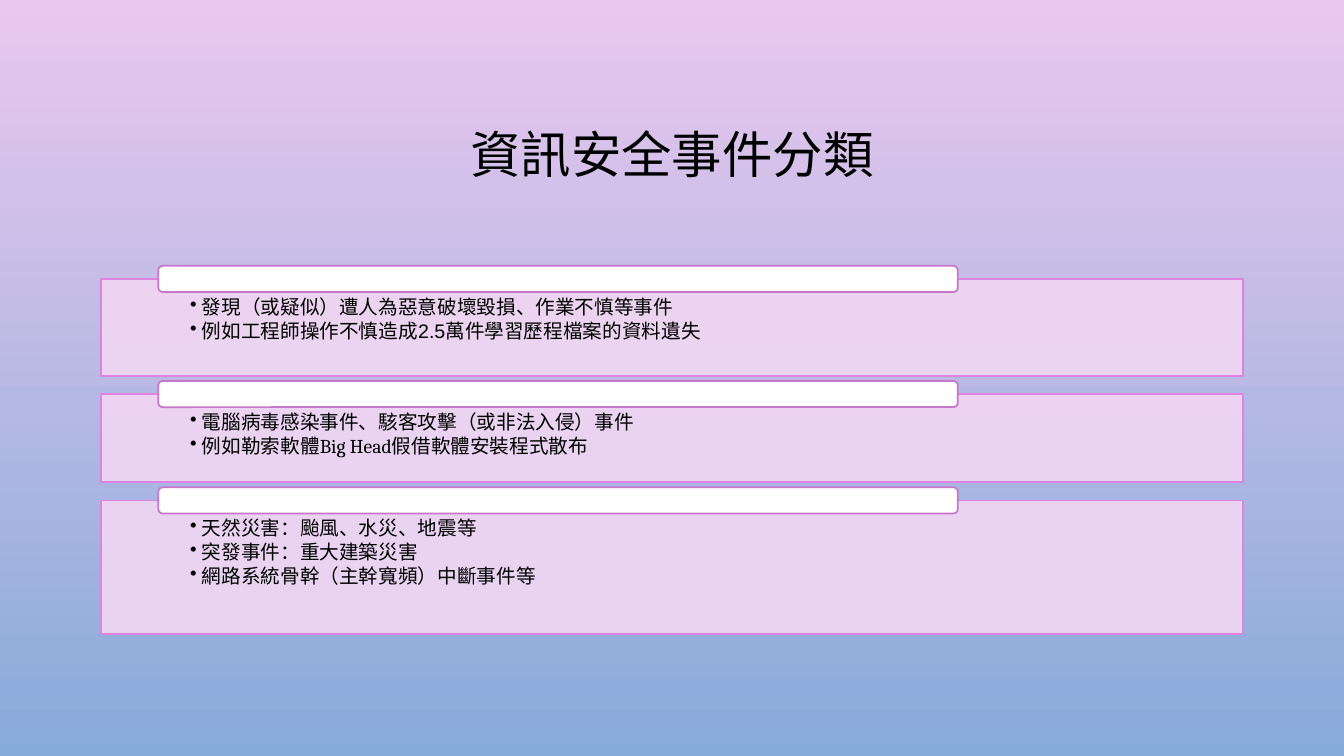
from lxml.etree import SubElement
from pptx import Presentation
from pptx.dml.color import RGBColor
from pptx.enum.shapes import MSO_SHAPE
from pptx.enum.text import MSO_ANCHOR, PP_ALIGN
from pptx.oxml.ns import qn
from pptx.util import Cm, Pt

LEFT, WIDTH = 2.54, 28.79
FIRST_TOP, GAP = 7.03, 0.46
TAB_LEFT, TAB_WIDTH, TAB_HEIGHT, TAB_RISE = 3.99, 20.15, 0.66, 0.33

CATEGORIES = [
    (2.44, [
        ("發現（或疑似）遭人為惡意破壞毀損、作業不慎等事件", "Arial"),
        ("例如工程師操作不慎造成2.5萬件學習歷程檔案的資料遺失", "Arial"),
    ]),
    (2.22, [
        ("電腦病毒感染事件、駭客攻擊（或非法入侵）事件", "Arial"),
        ("例如勒索軟體Big Head假借軟體安裝程式散布", "Cambria"),
    ]),
    (3.36, [
        ("天然災害：颱風、水災、地震等", "Arial"),
        ("突發事件：重大建築災害", "Arial"),
        ("網路系統骨幹（主幹寬頻）中斷事件等", "Arial"),
    ]),
]


def color(value):
    return RGBColor.from_string(value)


def paint_background(page, top, bottom):
    fill = page.background.fill
    fill.gradient()
    fill.gradient_angle = 270
    for stop, value in zip(fill.gradient_stops, (top, bottom)):
        stop.color.rgb = color(value)


def add_span(para, text, size, value, font="Arial"):
    para.line_spacing = 0.9
    span = para.add_run()
    span.text = text
    span.font.name = font
    span.font.size = Pt(size)
    span.font.color.rgb = color(value)


def set_frame(box, anchor, side, top, bottom):
    frame = box.text_frame
    frame.word_wrap = True
    frame.vertical_anchor = anchor
    frame.margin_left = frame.margin_right = Cm(side)
    frame.margin_top, frame.margin_bottom = Cm(top), Cm(bottom)
    return frame


def add_box(page, kind, left, top, width, height, fill, line):
    box = page.shapes.add_shape(kind, Cm(left), Cm(top), Cm(width), Cm(height))
    box.shadow.inherit = False
    box.fill.solid()
    box.fill.fore_color.rgb = color(fill)
    box.line.color.rgb = color(line)
    box.line.width = Pt(1.25)
    return box


def set_opacity(box, percent):
    fill_color = box.fill._xPr.find(qn("a:solidFill"))[0]
    SubElement(fill_color, qn("a:alpha"), val=str(percent * 1000))


def add_bullet(para):
    properties = para._p.get_or_add_pPr()
    properties.set("marL", str(Cm(0.3)))
    properties.set("indent", str(-Cm(0.3)))
    bullet_color = SubElement(properties, qn("a:buClr"))
    SubElement(bullet_color, qn("a:srgbClr"), val="000000")
    SubElement(properties, qn("a:buChar"), char="•")


def add_title(page, text):
    title = page.shapes.title
    title.left, title.top = Cm(LEFT), Cm(1.73)
    title.width, title.height = Cm(WIDTH), Cm(4.45)
    frame = set_frame(title, MSO_ANCHOR.MIDDLE, 0.25, 0.13, 0.13)
    para = frame.paragraphs[0]
    para.alignment = PP_ALIGN.CENTER
    add_span(para, text, 36, "000000")


def add_panel(page, top, height, items):
    panel = add_box(page, MSO_SHAPE.RECTANGLE, LEFT, top, WIDTH, height, "F1D7F3", "DD84E1")
    set_opacity(panel, 90)
    frame = set_frame(panel, MSO_ANCHOR.TOP, 2.25, 0.46, 0.28)
    for index, (text, font) in enumerate(items):
        para = frame.add_paragraph() if index else frame.paragraphs[0]
        add_bullet(para)
        para.level = 1
        para.alignment = PP_ALIGN.LEFT
        if index:
            para.space_before = Pt(2.1)
        add_span(para, text, 14, "000000", font)


def add_tab(page, top):
    add_box(page, MSO_SHAPE.ROUNDED_RECTANGLE, TAB_LEFT, top, TAB_WIDTH, TAB_HEIGHT,
            "FFFFFF", "C777CB")


def main():
    deck = Presentation()
    deck.slide_width, deck.slide_height = Cm(33.87), Cm(19.05)
    page = deck.slides.add_slide(deck.slide_layouts[5])
    paint_background(page, "EAC7EE", "87ABDA")
    add_title(page, "資訊安全事件分類")
    top = FIRST_TOP
    for height, items in CATEGORIES:
        add_panel(page, top, height, items)
        add_tab(page, top - TAB_RISE)
        top += height + GAP
    deck.save("out.pptx")


if __name__ == "__main__":
    main()
